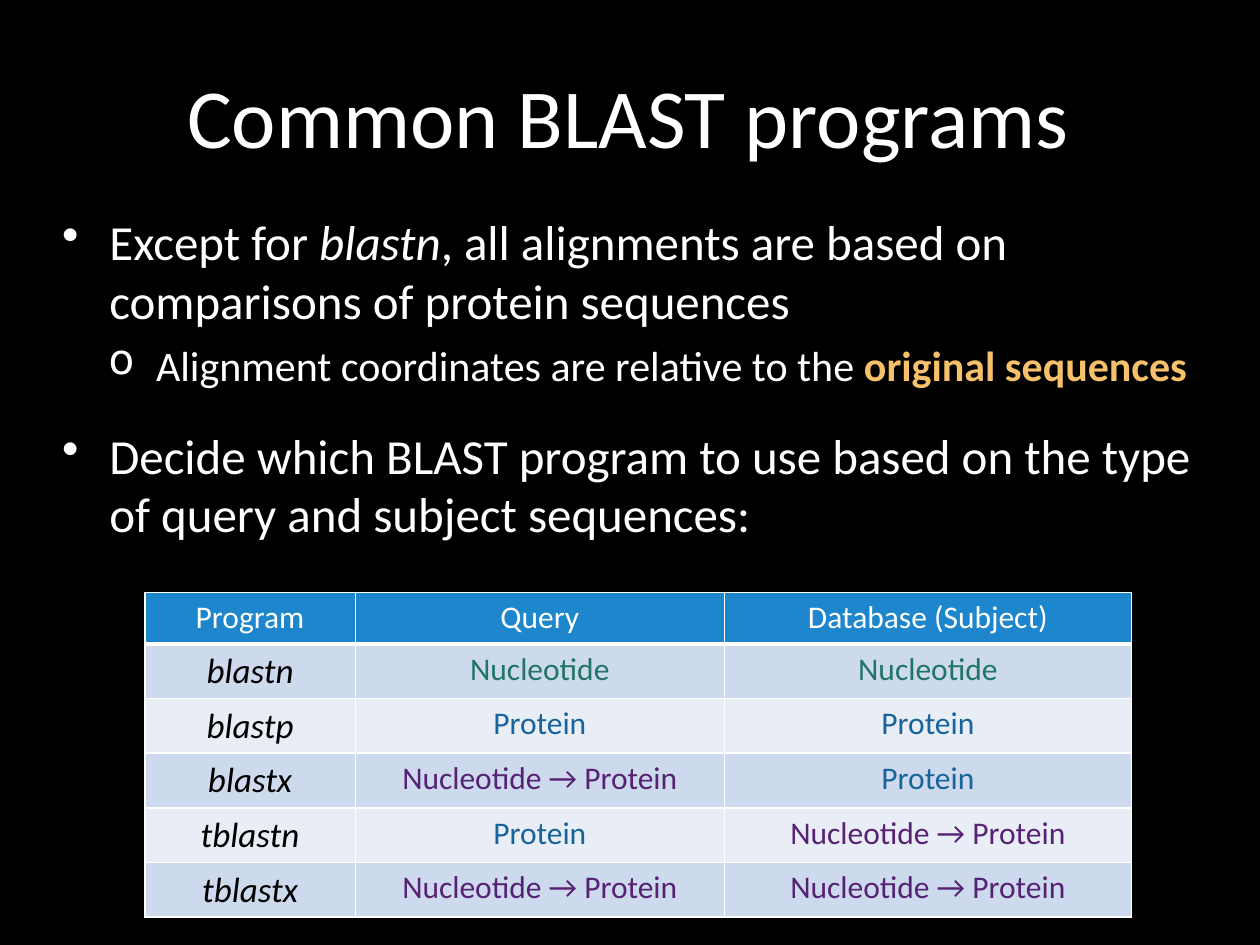
from dataclasses import dataclass

from lxml import etree
from pptx import Presentation
from pptx.dml.color import RGBColor
from pptx.enum.text import MSO_ANCHOR, PP_ALIGN
from pptx.oxml.ns import qn
from pptx.util import Emu, Inches, Pt

CENTER, LEFT = PP_ALIGN.CENTER, PP_ALIGN.LEFT
MIDDLE, TOP = MSO_ANCHOR.MIDDLE, MSO_ANCHOR.TOP
SLIDE_W, SLIDE_H = Inches(10), Inches(7.5)


@dataclass(frozen=True)
class Theme:
    font: str = "Calibri"
    back: str = "000000"
    light: str = "FFFFFF"
    dark: str = "000000"
    accent: str = "F6C16A"
    header: str = "1D86CD"
    bands: tuple = ("CDD9ED", "E8EDF6")
    nucleotide: str = "217567"
    protein: str = "16649A"
    translated: str = "562374"
    title_size: int = 48
    body_size: int = 28
    sub_size: int = 24
    program_size: int = 20
    cell_size: int = 18
    rule: int = 1
    header_rule: int = 3


@dataclass(frozen=True)
class Box:
    """Position and size in percent of the slide."""
    x: float
    y: float
    w: float
    h: float

    def emu(self) -> tuple:
        return (across(self.x), down(self.y), across(self.w), down(self.h))


@dataclass(frozen=True)
class Run:
    text: str
    color: str
    bold: bool = False
    italic: bool = False


@dataclass(frozen=True)
class Bullet:
    runs: tuple
    size: int
    mark: str = "•"
    margin: float = 0.38
    before: int = 20


T = Theme()
NUC, PROT, TRANS = "Nucleotide", "Protein", "Nucleotide → Protein"
KIND_COLORS = {NUC: T.nucleotide, PROT: T.protein, TRANS: T.translated}

TITLE_BOX = Box(3.9, 1.73, 91.9, 20.8)
BODY_BOX = Box(3.9, 21.73, 94.4, 37.87)
TABLE_BOX = Box(11.5, 62.67, 78.3, 32.8)
COLUMN_SHARES = (16.7, 29.3, 32.3)
HANGING = 0.375

BULLETS = (
    Bullet((Run("Except for ", T.light),
            Run("blastn", T.light, italic=True),
            Run(", all alignments are based on comparisons of protein sequences", T.light)),
           T.body_size, before=0),
    Bullet((Run("Alignment coordinates are relative to the ", T.light),
            Run("original sequences", T.accent, bold=True)),
           T.sub_size, mark="o", margin=0.75, before=6),
    Bullet((Run("Decide which BLAST program to use based on the type "
                "of query and subject sequences:", T.light),),
           T.body_size),
)

HEADINGS = ("Program", "Query", "Database (Subject)")
PROGRAMS = (
    ("blastn", NUC, NUC),
    ("blastp", PROT, PROT),
    ("blastx", TRANS, PROT),
    ("tblastn", PROT, TRANS),
    ("tblastx", TRANS, TRANS),
)


def across(percent: float) -> Emu:
    return Emu(round(SLIDE_W * percent / 100))


def down(percent: float) -> Emu:
    return Emu(round(SLIDE_H * percent / 100))


def add_run(p, text: str, *, size: int, color: str, bold=False, italic=False) -> None:
    r = p.add_run()
    r.text = text
    r.font.name = T.font
    r.font.size = Pt(size)
    r.font.bold = bold
    r.font.italic = italic
    r.font.color.rgb = RGBColor.from_string(color)


def add_frame(s, box: Box, anchor=TOP):
    tf = s.shapes.add_textbox(*box.emu()).text_frame
    tf.word_wrap = True
    tf.vertical_anchor = anchor
    return tf


def add_bullets(s, box: Box, bullets: tuple) -> None:
    tf = add_frame(s, box)
    for i, b in enumerate(bullets):
        p = tf.add_paragraph() if i else tf.paragraphs[0]
        pPr = p._p.get_or_add_pPr()
        pPr.set("marL", str(Inches(b.margin)))
        pPr.set("indent", str(-Inches(HANGING)))
        etree.SubElement(pPr, qn("a:buChar")).set("char", b.mark)
        p.alignment = LEFT
        p.space_before = Pt(b.before)
        for run in b.runs:
            add_run(p, run.text, size=b.size, color=run.color,
                    bold=run.bold, italic=run.italic)


def set_borders(cell, row: int) -> None:
    tcPr = cell._tc.get_or_add_tcPr()
    heavy = {(0, "B"), (1, "T")}
    for side in "LRTB":
        width = T.header_rule if (row, side) in heavy else T.rule
        ln = etree.SubElement(tcPr, qn(f"a:ln{side}"), w=str(Pt(width)))
        fill = etree.SubElement(ln, qn("a:solidFill"))
        etree.SubElement(fill, qn("a:srgbClr"), val=T.light)


def cell_format(row: int, col: int, text: str) -> dict:
    if row == 0:
        return dict(size=T.cell_size, color=T.light)
    if col == 0:
        return dict(size=T.program_size, color=T.dark, italic=True)
    return dict(size=T.cell_size, color=KIND_COLORS[text])


def add_program_table(s, box: Box, rows: tuple) -> None:
    tbl = s.shapes.add_table(len(rows), len(COLUMN_SHARES), *box.emu()).table
    for column, share in zip(tbl.columns, COLUMN_SHARES):
        column.width = across(share)
    for i, row in enumerate(rows):
        fill = T.bands[(i - 1) % 2] if i else T.header
        for j, text in enumerate(row):
            cell = tbl.cell(i, j)
            set_borders(cell, i)
            cell.fill.solid()
            cell.fill.fore_color.rgb = RGBColor.from_string(fill)
            p = cell.text_frame.paragraphs[0]
            p.alignment = CENTER
            add_run(p, text, **cell_format(i, j, text))


def main() -> None:
    prs = Presentation()
    prs.slide_width, prs.slide_height = SLIDE_W, SLIDE_H
    s = prs.slides.add_slide(prs.slide_layouts[6])
    s.background.fill.solid()
    s.background.fill.fore_color.rgb = RGBColor.from_string(T.back)

    p = add_frame(s, TITLE_BOX, MIDDLE).paragraphs[0]
    p.alignment = CENTER
    add_run(p, "Common BLAST programs", size=T.title_size, color=T.light)
    add_bullets(s, BODY_BOX, BULLETS)
    add_program_table(s, TABLE_BOX, (HEADINGS, *PROGRAMS))
    prs.save("out.pptx")


if __name__ == "__main__":
    main()
